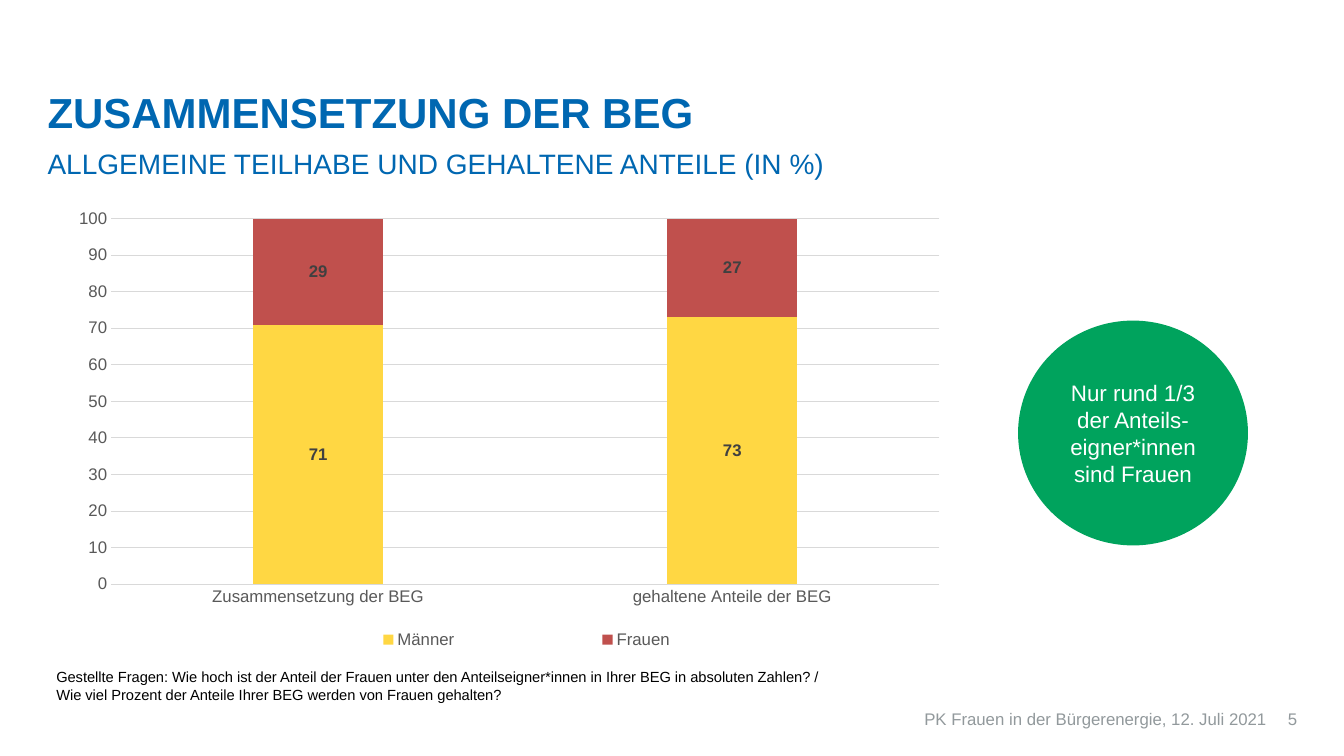
from lxml import etree
from pptx import Presentation
from pptx.chart.data import CategoryChartData
from pptx.dml.color import RGBColor
from pptx.enum.chart import XL_CHART_TYPE, XL_LABEL_POSITION, XL_LEGEND_POSITION, XL_TICK_MARK
from pptx.enum.shapes import MSO_SHAPE
from pptx.enum.text import MSO_ANCHOR, PP_ALIGN
from pptx.oxml.ns import qn
from pptx.util import Pt

STACKED = XL_CHART_TYPE.COLUMN_STACKED
LABEL_CENTER = XL_LABEL_POSITION.CENTER
LEGEND_BOTTOM = XL_LEGEND_POSITION.BOTTOM
NO_TICK = XL_TICK_MARK.NONE
ELLIPSE = MSO_SHAPE.OVAL
TOP, MIDDLE, BOTTOM = MSO_ANCHOR.TOP, MSO_ANCHOR.MIDDLE, MSO_ANCHOR.BOTTOM
LEFT, CENTER, RIGHT = PP_ALIGN.LEFT, PP_ALIGN.CENTER, PP_ALIGN.RIGHT

BLUE, GREEN, YELLOW, RED = "0067B1", "00A35D", "FFD743", "C0504D"
GRAY, AXIS_GRAY, LABEL_GRAY, GRID_GRAY = "92999C", "595959", "404040", "D9D9D9"
BLACK, WHITE = "000000", "FFFFFF"


def color(value):
    return RGBColor.from_string(value)


class SlideBuilder:
    font_name = "Arial"

    def __init__(self, slide):
        self.slide = slide

    def style_font(self, font, size, hex_color, bold=False):
        font.name = self.font_name
        font.size = Pt(size)
        font.bold = bold
        font.color.rgb = color(hex_color)

    def fill_text(self, text_frame, text, size, hex_color, bold=False,
                  align=LEFT, anchor=TOP, line_spacing=None):
        text_frame.text = text
        text_frame.word_wrap = True
        text_frame.vertical_anchor = anchor
        for paragraph in text_frame.paragraphs:
            paragraph.alignment = align
            if line_spacing:
                paragraph.line_spacing = Pt(line_spacing)
            for run in paragraph.runs:
                self.style_font(run.font, size, hex_color, bold)

    def text(self, box, text, size, hex_color, inset=True, **options):
        text_frame = self.slide.shapes.add_textbox(*map(Pt, box)).text_frame
        if not inset:
            text_frame.margin_left = text_frame.margin_right = 0
            text_frame.margin_top = text_frame.margin_bottom = 0
        self.fill_text(text_frame, text, size, hex_color, **options)

    def ellipse(self, box, text, size, fill, hex_color):
        shape = self.slide.shapes.add_shape(ELLIPSE, *map(Pt, box))
        shape.shadow.inherit = False
        shape.fill.solid()
        shape.fill.fore_color.rgb = color(fill)
        shape.line.fill.background()
        self.fill_text(shape.text_frame, text, size, hex_color,
                       align=CENTER, anchor=MIDDLE)

    def place(self, element, position, inner=False):
        for old_layout in element.findall(qn("c:layout")):
            element.remove(old_layout)
        layout = etree.Element(qn("c:layout"))
        manual = etree.SubElement(layout, qn("c:manualLayout"))
        settings = [("layoutTarget", "inner")] if inner else []
        settings += [("xMode", "edge"), ("yMode", "edge")]
        settings += zip("xywh", position)
        for name, value in settings:
            etree.SubElement(manual, qn(f"c:{name}")).set("val", str(value))
        element.insert(0 if inner else 1, layout)

    def stacked_chart(self, box, categories, series_list, plot_position, legend_position):
        data = CategoryChartData()
        data.categories = categories
        for name, values, _ in series_list:
            data.add_series(name, values)
        chart = self.slide.shapes.add_chart(STACKED, *map(Pt, box), data).chart
        self.style_font(chart.font, 10, BLACK)
        chart.has_title = False

        plot = chart.plots[0]
        plot.gap_width = 219
        plot.overlap = 100
        plot.vary_by_categories = False
        for series, (_, _, fill) in zip(plot.series, series_list):
            series.format.fill.solid()
            series.format.fill.fore_color.rgb = color(fill)
            labels = series.data_labels
            labels.show_value = True
            labels.position = LABEL_CENTER
            self.style_font(labels.font, 12, LABEL_GRAY, bold=True)

        for axis in (chart.category_axis, chart.value_axis):
            axis.major_tick_mark = axis.minor_tick_mark = NO_TICK
            self.style_font(axis.tick_labels.font, 12, AXIS_GRAY)
        value_axis = chart.value_axis
        value_axis.minimum_scale = 0
        value_axis.maximum_scale = 100
        value_axis.major_unit = 10
        value_axis.format.line.fill.background()
        for line in (chart.category_axis.format.line, value_axis.major_gridlines.format.line):
            line.color.rgb = color(GRID_GRAY)
            line.width = Pt(0.75)

        chart.has_legend = True
        legend = chart.legend
        legend.position = LEGEND_BOTTOM
        legend.include_in_layout = False
        self.style_font(legend.font, 12, AXIS_GRAY)
        chart_element = chart.element.find(qn("c:chart"))
        self.place(chart_element.find(qn("c:plotArea")), plot_position, inner=True)
        self.place(chart_element.find(qn("c:legend")), legend_position)


def main():
    presentation = Presentation()
    presentation.slide_width = Pt(960)
    presentation.slide_height = Pt(540)
    builder = SlideBuilder(presentation.slides.add_slide(presentation.slide_layouts[6]))

    builder.text((34, 35.5, 581, 62.5), "ZUSAMMENSETZUNG DER BEG", 30, BLUE,
                 inset=False, bold=True, anchor=BOTTOM, line_spacing=32)
    builder.text((34, 102.2, 581, 22.3), "ALLGEMEINE TEILHABE UND GEHALTENE ANTEILE (IN %)",
                 20, BLUE, inset=False, line_spacing=26.4)
    builder.stacked_chart(
        (36, 116.6, 648, 356.4),
        ["Zusammensetzung der BEG", "gehaltene Anteile der BEG"],
        [("Männer", (71, 73), YELLOW), ("Frauen", (29, 27), RED)],
        plot_position=(0.067, 0.111, 0.913, 0.733),
        legend_position=(0.21, 0.92, 0.63, 0.07))
    builder.ellipse((727.2, 229, 164.2, 160.6),
                    "Nur rund 1/3 der Anteils-eigner*innen sind Frauen", 16, GREEN, WHITE)
    builder.text((33.1, 473.8, 601.2, 33.8),
                 "Gestellte Fragen: Wie hoch ist der Anteil der Frauen unter den "
                 "Anteilseigner*innen in Ihrer BEG in absoluten Zahlen? /\n"
                 "Wie viel Prozent der Anteile Ihrer BEG werden von Frauen gehalten?",
                 10.5, BLACK)
    builder.text((524.2, 506.2, 380.8, 14.4), "PK Frauen in der Bürgerenergie, 12. Juli 2021",
                 12, GRAY, inset=False, align=RIGHT)
    builder.text((905, 506.2, 21.6, 14.4), "5", 12, GRAY, inset=False, align=RIGHT)

    presentation.save("out.pptx")


if __name__ == "__main__":
    main()
